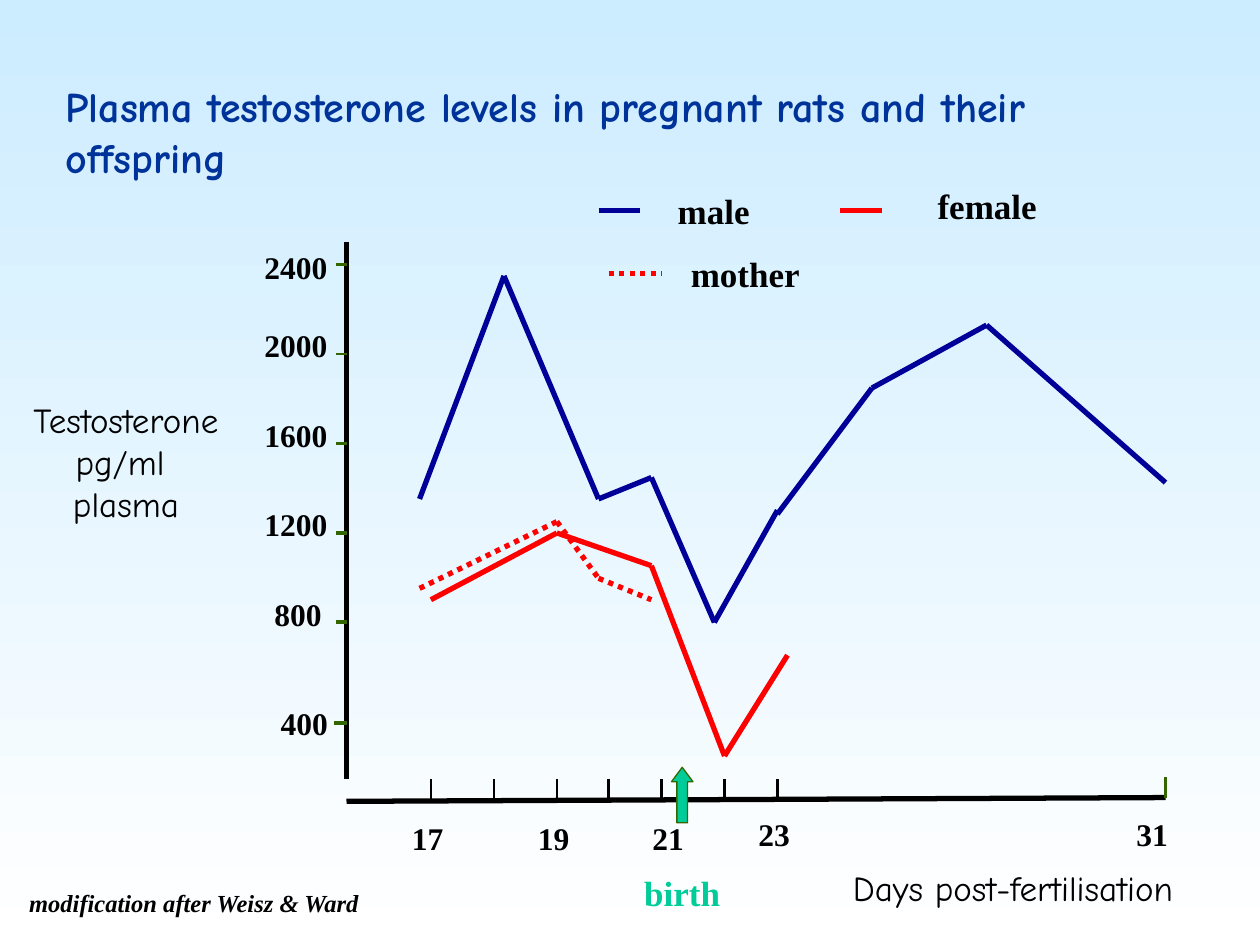
from itertools import pairwise

from lxml import etree
from pptx import Presentation
from pptx import util as u
from pptx.dml.color import RGBColor
from pptx.enum import dml, shapes, text
from pptx.oxml import ns

COLORS = {
    "sky": "CCECFF", "white": "FFFFFF", "title": "003399", "black": "000000",
    "male": "000099", "female": "FF0000", "tick": "336600", "birth": "00CC99",
}
TIMES, COMIC = "Times New Roman", "Comic Neue"
FORMATS = {
    "title": {"name": COMIC, "size": u.Pt(24), "bold": True},
    "axis": {"name": COMIC, "size": u.Pt(20), "bold": False},
    "tick": {"name": TIMES, "size": u.Pt(18), "bold": True},
    "label": {"name": TIMES, "size": u.Pt(20), "bold": True},
    "source": {"name": TIMES, "size": u.Pt(14), "bold": True, "italic": True},
}
CENTRED_FRAME = {"word_wrap": False, "vertical_anchor": text.MSO_ANCHOR.MIDDLE,
                 "margin_left": 0, "margin_right": 0}
CORNER_FRAME = {"word_wrap": False, "vertical_anchor": text.MSO_ANCHOR.TOP}

# Curves as (colour, dashed, points); the male curve has a small step at day 23.
CURVES = [
    ("male", False, [(3.33, 3.96), (4, 2.19), (4.75, 3.96), (5.17, 3.79),
                     (5.67, 4.94), (6.17, 4.05)]),
    ("male", False, [(6.17, 4.08), (6.92, 3.08), (7.83, 2.58), (9.25, 3.83)]),
    ("female", True, [(3.33, 4.67), (4.42, 4.14), (4.75, 4.59), (5.17, 4.76)]),
    ("female", False, [(3.42, 4.76), (4.42, 4.23), (5.17, 4.49), (5.75, 6),
                       (6.25, 5.2)]),
]
LEGEND = [
    # name, text box, colour, dashed, line start and end
    ("male", (5.25, 1.42, 0.83, 0.5), "male", False, [(4.75, 1.67), (5.08, 1.67)]),
    ("female", (7.38, 1.42, 0.91, 0.42), "female", False, [(6.67, 1.67), (7, 1.67)]),
    ("mother", (5.44, 1.92, 0.95, 0.5), "female", True, [(4.83, 2.17), (5.25, 2.17)]),
]
AXIS_X, AXIS_END = 2.75, 9.25
Y_LABELS = [("2400", 2, 1.92), ("2000", 2, 2.54), ("1600", 2, 3.25),
            ("1200", 2, 3.96), ("800", 2.08, 4.67)]
DAY_TICKS = [3.42, 3.92, 4.42, 4.83, 5.25, 5.75, 6.17]
DAY_LABELS = [("17", 3.17, 6.45), ("19", 4.17, 6.45), ("21", 5.08, 6.45),
              ("23", 5.92, 6.42), ("31", 8.92, 6.42)]


def rgb(color):
    return RGBColor.from_string(COLORS[color])


def set_attributes(target, values):
    for name, value in values.items():
        setattr(target, name, value)


def format_font(font, style, color):
    set_attributes(font, FORMATS[style])
    font.color.rgb = rgb(color)


def set_background(slide):
    fill = slide.background.fill
    fill.gradient()
    fill.gradient_angle = 270
    for stop, color, position in zip(fill.gradient_stops, ("sky", "white"), (0, 1)):
        stop.color.rgb = rgb(color)
        stop.position = position


def set_title(slide, wording):
    title = slide.shapes.title
    set_attributes(title, {"left": u.Inches(0.42), "top": u.Inches(0.5),
                           "width": u.Inches(9.17), "height": u.Inches(1.08)})
    frame = title.text_frame
    frame.text = wording
    frame.vertical_anchor = text.MSO_ANCHOR.MIDDLE
    paragraph = frame.paragraphs[0]
    paragraph.alignment = text.PP_ALIGN.LEFT
    format_font(paragraph.runs[0].font, "title", "title")


def add_text(slide, box, wording, style, color="black", centred=True):
    """Add unwrapped text, centred in its box or starting at its top left."""
    shape = slide.shapes.add_textbox(*map(u.Inches, box))
    frame = shape.text_frame
    frame.text = wording
    set_attributes(frame, CENTRED_FRAME if centred else CORNER_FRAME)
    for paragraph in frame.paragraphs:
        paragraph.alignment = text.PP_ALIGN.CENTER if centred else text.PP_ALIGN.LEFT
        format_font(paragraph.runs[0].font, style, color)


def add_tick_label(slide, wording, left, top):
    width = {2: 0.45, 3: 0.58, 4: 0.7}[len(wording)]
    add_text(slide, (left, top, width, 0.4), wording, "tick", centred=False)


def add_line(slide, start, end, color="black", width=3, dashed=False):
    connector = slide.shapes.add_connector(
        shapes.MSO_CONNECTOR.STRAIGHT, *map(u.Inches, (*start, *end)))
    connector.line.color.rgb = rgb(color)
    connector.line.width = u.Pt(width)
    if dashed:
        connector.line.dash_style = dml.MSO_LINE.ROUND_DOT
    properties = connector._element.find(ns.qn("p:spPr"))
    etree.SubElement(properties, ns.qn("a:effectLst"))


def add_curve(slide, color, dashed, points):
    for start, end in pairwise(points):
        add_line(slide, start, end, color, dashed=dashed)


def add_axes(slide):
    add_line(slide, (AXIS_X, 1.92), (AXIS_X, 6.18))
    add_line(slide, (AXIS_X, 6.36), (AXIS_END, 6.33))
    for index, label in enumerate(Y_LABELS):
        y = 2.1 + 0.71 * index
        add_line(slide, (2.67, y), (AXIS_X, y), "tick", 1.5 if index < 3 else 2.25)
        add_tick_label(slide, *label)
    add_line(slide, (2.65, 5.74), (AXIS_X, 5.74), "tick", 2.25)
    add_text(slide, (2.17, 5.47, 0.49, 0.53), "400", "tick")
    for x in DAY_TICKS:
        add_line(slide, (x, 6.36), (x, 6.18), width=1.5)
    add_line(slide, (AXIS_END, 6.33), (AXIS_END, 6.17), "tick", 2.25)
    for label in DAY_LABELS:
        add_tick_label(slide, *label)
    add_text(slide, (0, 3.08, 2, 1.17), "Testosterone\npg/ml \nplasma", "axis")
    add_text(slide, (6.58, 6.75, 2.92, 0.58), "Days post-fertilisation", "axis")


def add_birth_marker(slide):
    arrow = slide.shapes.add_shape(
        shapes.MSO_SHAPE.UP_ARROW, *map(u.Inches, (5.33, 6.09, 0.17, 0.44)))
    arrow.adjustments[0], arrow.adjustments[1] = 0.5, 0.67
    arrow.shadow.inherit = False
    arrow.fill.solid()
    arrow.fill.fore_color.rgb = rgb("birth")
    arrow.line.color.rgb = rgb("tick")
    arrow.line.width = u.Pt(0.75)
    add_text(slide, (5, 6.83, 0.83, 0.5), "birth", "label", "birth")


def main():
    presentation = Presentation()
    presentation.slide_width = u.Inches(10)
    presentation.slide_height = u.Inches(7.5)
    slide = presentation.slides.add_slide(presentation.slide_layouts[5])
    set_background(slide)
    set_title(slide, "Plasma testosterone levels in pregnant rats and their offspring")
    add_axes(slide)
    for curve in CURVES:
        add_curve(slide, *curve)
    for name, box, color, dashed, points in LEGEND:
        add_curve(slide, color, dashed, points)
        add_text(slide, box, name, "label")
    add_birth_marker(slide)
    add_text(slide, (0.14, 7, 2.8, 0.33), "modification after Weisz & Ward", "source")
    presentation.save("out.pptx")


if __name__ == "__main__":
    main()
